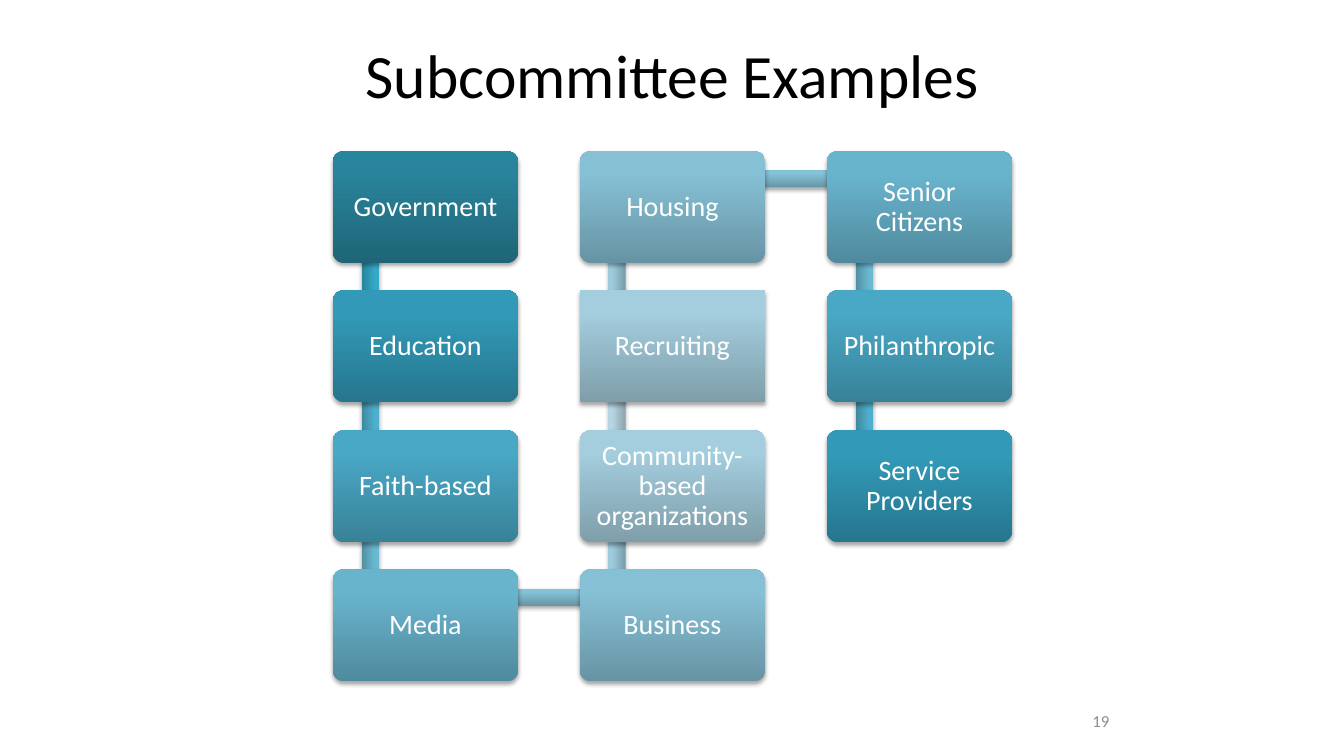
import dataclasses

import pptx
import pptx.dml.color
import pptx.enum.shapes
import pptx.enum.text
import pptx.oxml
import pptx.oxml.ns
import pptx.util

PX = 9144
ALIGN = pptx.enum.text.PP_ALIGN
ANCHOR = pptx.enum.text.MSO_ANCHOR
SHAPE = pptx.enum.shapes.MSO_SHAPE


@dataclasses.dataclass(frozen=True)
class Theme:
    font: str = "Calibri"
    title_size: int = 44
    card_size: int = 20
    number_size: int = 12
    title_color: str = "000000"
    card_color: str = "FFFFFF"
    number_color: str = "8C8C8C"
    shadow_color: str = "000000"
    card_fills: tuple = (
        ("1F6577", "29839B", "27859E"),
        ("26768D", "329AB8", "309CBB"),
        ("388298", "49A8C6", "47AAC9"),
        ("508A9E", "68B4CD", "66B6D0"),
        ("6794A4", "86C0D5", "85C2D7"),
        ("7E9EAA", "A4CDDD", "A3CEDF"),
    )
    link_fills: tuple = (
        ("28829A", "34A9C8", "32ABCC"),
        ("3D889E", "4FB0CD", "4DB2D0"),
        ("528EA1", "6AB9D1", "69BAD4"),
        ("6695A5", "84C2D7", "83C3D9"),
        ("799DAA", "9ECCDD", "9DCDDF"),
        ("8DA5AF", "B7D6E3", "B7D8E5"),
    )


class SlideBuilder:
    def __init__(self, slide, theme):
        self.slide = slide
        self.theme = theme

    def add_wording(self, frame, wording, size, color, anchor, spacing=1.0):
        frame.word_wrap = True
        frame.auto_size = pptx.enum.text.MSO_AUTO_SIZE.NONE
        frame.vertical_anchor = anchor
        paragraph = frame.paragraphs[0]
        paragraph.alignment = ALIGN.CENTER
        paragraph.line_spacing = spacing
        run = paragraph.add_run()
        run.text = wording
        run.font.name = self.theme.font
        run.font.size = pptx.util.Pt(size)
        run.font.color.rgb = pptx.dml.color.RGBColor.from_string(color)

    def title(self, wording, left, top, width, height):
        heading = self.slide.shapes.title
        heading.left, heading.top = left * PX, top * PX
        heading.width, heading.height = width * PX, height * PX
        self.add_wording(heading.text_frame, wording, self.theme.title_size,
                         self.theme.title_color, ANCHOR.TOP, 0.9)

    def page_number(self, wording, left, top, width, height):
        number = self.slide.shapes.add_textbox(left * PX, top * PX, width * PX, height * PX)
        self.add_wording(number.text_frame, wording, self.theme.number_size,
                         self.theme.number_color, ANCHOR.MIDDLE)

    def block(self, kind, left, top, width, height, colors):
        block = self.slide.shapes.add_shape(kind, left * PX, top * PX, width * PX, height * PX)
        block.line.fill.background()
        stops = "".join(
            f'<a:gs pos="{position}"><a:srgbClr val="{color}"/></a:gs>'
            for position, color in zip((0, 80000, 100000), colors))
        namespace = pptx.oxml.ns.nsdecls("a")
        outline = block.element.spPr.find(pptx.oxml.ns.qn("a:ln"))
        outline.addprevious(pptx.oxml.parse_xml(
            f'<a:gradFill {namespace} rotWithShape="1"><a:gsLst>{stops}</a:gsLst>'
            '<a:lin ang="16200000" scaled="0"/></a:gradFill>'))
        outline.addnext(pptx.oxml.parse_xml(
            f'<a:effectLst {namespace}><a:outerShdw blurRad="40000" dist="23000" '
            f'dir="5400000" rotWithShape="0"><a:srgbClr val="{self.theme.shadow_color}">'
            '<a:alpha val="35000"/></a:srgbClr></a:outerShdw></a:effectLst>'))
        return block

    def link(self, left, top, length, thickness, colors, rotation=0):
        link = self.block(SHAPE.RECTANGLE, left, top, length, thickness, colors)
        link.rotation = rotation

    def card(self, wording, left, top, width, height, colors, rounded=True):
        kind = SHAPE.ROUNDED_RECTANGLE if rounded else SHAPE.RECTANGLE
        card = self.block(kind, left, top, width, height, colors)
        if rounded:
            card.adjustments[0] = 0.1
        frame = card.text_frame
        frame.margin_left = frame.margin_right = 8 * PX
        frame.margin_top = frame.margin_bottom = 8 * PX
        self.add_wording(frame, wording, self.theme.card_size, self.theme.card_color,
                         ANCHOR.MIDDLE, 0.9)


SUBCOMMITTEES = (
    "Government", "Education", "Faith-based", "Media",
    "Business", "Community-based organizations", "Recruiting", "Housing",
    "Senior Citizens", "Philanthropic", "Service Providers",
)
ROWS = 4


def row_top(row):
    return 150 + round(row * 415 / 3)


def draw_chain(builder):
    count = len(SUBCOMMITTEES)
    for index, subcommittee in enumerate(SUBCOMMITTEES):
        column, step = divmod(index, ROWS)
        upward = column % 2 == 1
        row = ROWS - 1 - step if upward else step
        left, top = 330 + 245 * column, row_top(row)
        if index < count - 1:
            colors = builder.theme.link_fills[min(index, count - 1 - index)]
            if step == ROWS - 1:
                builder.link(left + 37, top + 19, 244, 17, colors)
            else:
                upper_row = row - 1 if upward else row
                builder.link(left - 32, row_top(upper_row) + 88, 138, 17, colors,
                             270 if upward else 90)
        builder.card(subcommittee, left, top, 184, 111,
                     builder.theme.card_fills[min(index, count - index)],
                     rounded=subcommittee != "Recruiting")


def main():
    presentation = pptx.Presentation()
    presentation.slide_width = 1333 * PX
    presentation.slide_height = 750 * PX
    slide = presentation.slides.add_slide(presentation.slide_layouts[5])
    builder = SlideBuilder(slide, Theme())
    builder.title("Subcommittee Examples", 92, 40, 1150, 145)
    draw_chain(builder)
    builder.page_number("19", 942, 695, 300, 40)
    presentation.save("out.pptx")


if __name__ == "__main__":
    main()
